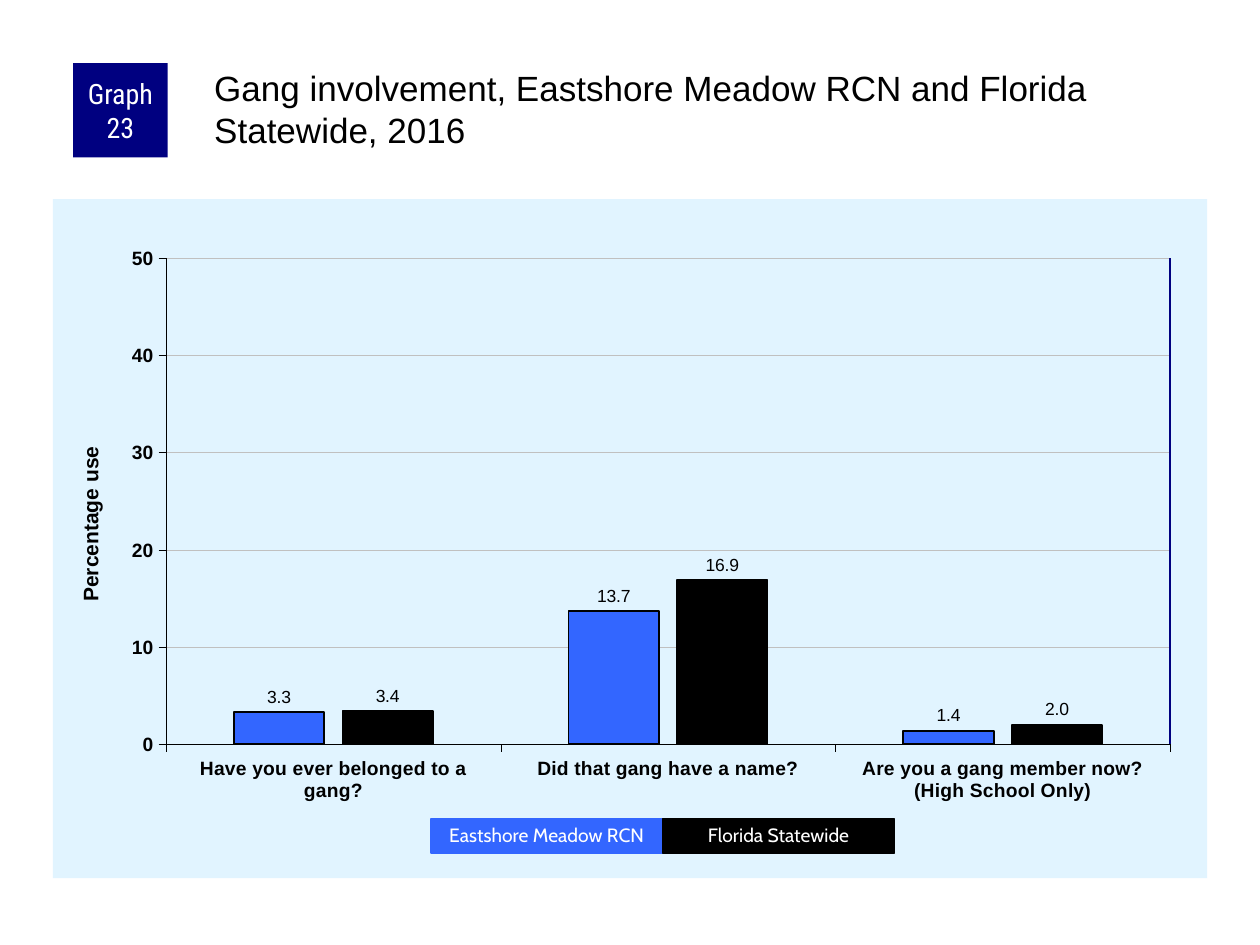
import pptx
import pptx.chart.data
import pptx.dml.color
import pptx.enum.chart
import pptx.enum.shapes
import pptx.enum.text
import pptx.oxml
import pptx.oxml.ns
import pptx.util

Inch, Pt = pptx.util.Inches, pptx.util.Pt
Kind = pptx.enum.chart
Align, Anchor = pptx.enum.text.PP_ALIGN, pptx.enum.text.MSO_ANCHOR
BLUE, BLACK, NAVY, WHITE = "3366FF", "000000", "000080", "FFFFFF"
REGION, STATE = "Eastshore Meadow RCN", "Florida Statewide"


def paint(part, color, width=None):
    """Colour a font, a fill or, when a width is given, a line."""
    if width:
        part.width = Pt(width)
        part = part.fill
    if hasattr(part, "solid"):
        part.solid()
        part.fore_color.rgb = pptx.dml.color.RGBColor.from_string(color)
    else:
        part.color.rgb = pptx.dml.color.RGBColor.from_string(color)


def style(font, face, size, color, bold=False):
    font.name, font.size, font.bold = face, Pt(size), bold
    paint(font, color)


deck = pptx.Presentation()
deck.slide_width, deck.slide_height = Inch(10), Inch(7.5)
slide = deck.slides.add_slide(deck.slide_layouts[5])
shapes = slide.shapes

# Title
title = shapes.title
title.left, title.top, title.width, title.height = map(Inch, (1.67, 0.5, 7.92, 0.83))
frame = title.text_frame
frame.auto_size = pptx.enum.text.MSO_AUTO_SIZE.NONE
frame.word_wrap = True
frame.vertical_anchor = Anchor.TOP
frame.margin_left = frame.margin_top = Inch(0.03)
frame.margin_right = frame.margin_bottom = 0
para = frame.paragraphs[0]
para.alignment = Align.LEFT
run = para.add_run()
run.text = f"Gang involvement, {REGION} and {STATE}, 2016"
style(run.font, "Arial", 20, BLACK)

# Chart
left, top, wide, high = 0.42, 1.58, 9.16, 5.39
data = pptx.chart.data.CategoryChartData(number_format="0.0")
data.categories = [
    "Have you ever belonged to a gang?",
    "Did that gang have a name?",
    "Are you a gang member now?\n(High School Only)",
]
data.add_series("Series 1", (3.3, 13.7, 1.4))
data.add_series("Series 2", (3.4, 16.9, 2.0))
chart = shapes.add_chart(
    Kind.XL_CHART_TYPE.COLUMN_CLUSTERED,
    *map(Inch, (left, top, wide, high)), data).chart
chart.has_legend = chart.has_title = False
style(chart.font, "Arial", 11.5, BLACK)

plot = chart.plots[0]
plot.gap_width, plot.overlap = 150, -20
plot.vary_by_categories = False
for series, color in zip(plot.series, (BLUE, BLACK)):
    paint(series.format.fill, color)
    paint(series.format.line, BLACK, 1)
    labels = series.data_labels
    labels.show_value = True
    labels.number_format, labels.number_format_is_linked = "0.0", False
    labels.position = Kind.XL_LABEL_POSITION.OUTSIDE_END
    style(labels.font, "Arial", 10, BLACK)

value = chart.value_axis
for axis in (chart.category_axis, value):
    axis.major_tick_mark = Kind.XL_TICK_MARK.OUTSIDE
    axis.minor_tick_mark = Kind.XL_TICK_MARK.NONE
    style(axis.tick_labels.font, "Arial", 11, BLACK, True)
    paint(axis.format.line, BLACK, 0.25)
value.minimum_scale, value.maximum_scale, value.major_unit = 0, 50, 10
value.tick_labels.number_format = "0"
value.tick_labels.number_format_is_linked = False
paint(value.major_gridlines.format.line, "C0C0C0", 0.25)
run = value.axis_title.text_frame.paragraphs[0].add_run()
run.text = "Percentage use"
style(run.font, "Arial", 12, BLACK, True)

# Background and inner plot area of the chart
names = pptx.oxml.ns.nsdecls("c", "a")
root = chart.element
root.find(pptx.oxml.ns.qn("c:chart")).addnext(pptx.oxml.parse_xml(
    f'<c:spPr {names}><a:solidFill><a:srgbClr val="E1F4FF"/></a:solidFill>'
    "<a:ln><a:noFill/></a:ln></c:spPr>"))
x, y, w, h = 0.098, 0.087, 0.87, 0.716
area = root.find(".//" + pptx.oxml.ns.qn("c:plotArea"))
for old in area.findall(pptx.oxml.ns.qn("c:layout")):
    area.remove(old)
area.insert(0, pptx.oxml.parse_xml(
    f'<c:layout {names}><c:manualLayout><c:layoutTarget val="inner"/>'
    '<c:xMode val="edge"/><c:yMode val="edge"/>'
    f'<c:x val="{x}"/><c:y val="{y}"/><c:w val="{w}"/><c:h val="{h}"/>'
    "</c:manualLayout></c:layout>"))

# Right edge of the plot
edge = Inch(left + (x + w) * wide)
side = shapes.add_connector(
    pptx.enum.shapes.MSO_CONNECTOR.STRAIGHT,
    edge, Inch(top + y * high), edge, Inch(top + (y + h) * high))
paint(side.line, NAVY, 1)
side.element.spPr.append(pptx.oxml.parse_xml(f"<a:effectLst {names}/>"))

# Number badge and legend keys
key = 1.84
boxes = [
    ("Graph 23", (0.58, 0.5, 0.75, 0.75), NAVY, "Roboto Condensed", 16),
    (REGION, (3.42, 6.5, key, 0.27), BLUE, "Cabin", 11),
    (STATE, (3.42 + key, 6.5, key, 0.27), BLACK, "Cabin", 11),
]
for text, place, color, face, size in boxes:
    box = shapes.add_shape(
        pptx.enum.shapes.MSO_SHAPE.RECTANGLE, *map(Inch, place))
    box.shadow.inherit = False
    paint(box.fill, color)
    frame = box.text_frame
    frame.word_wrap = True
    frame.vertical_anchor = Anchor.MIDDLE
    frame.margin_left = frame.margin_right = Inch(0.05)
    frame.margin_top = frame.margin_bottom = 0
    para = frame.paragraphs[0]
    para.alignment = Align.CENTER
    if face == "Cabin":
        paint(box.line, color, 0.75)
        para.line_spacing = 0.9
    else:
        box.line.fill.background()
    run = para.add_run()
    run.text = text
    style(run.font, face, size, WHITE)

deck.save("out.pptx")
